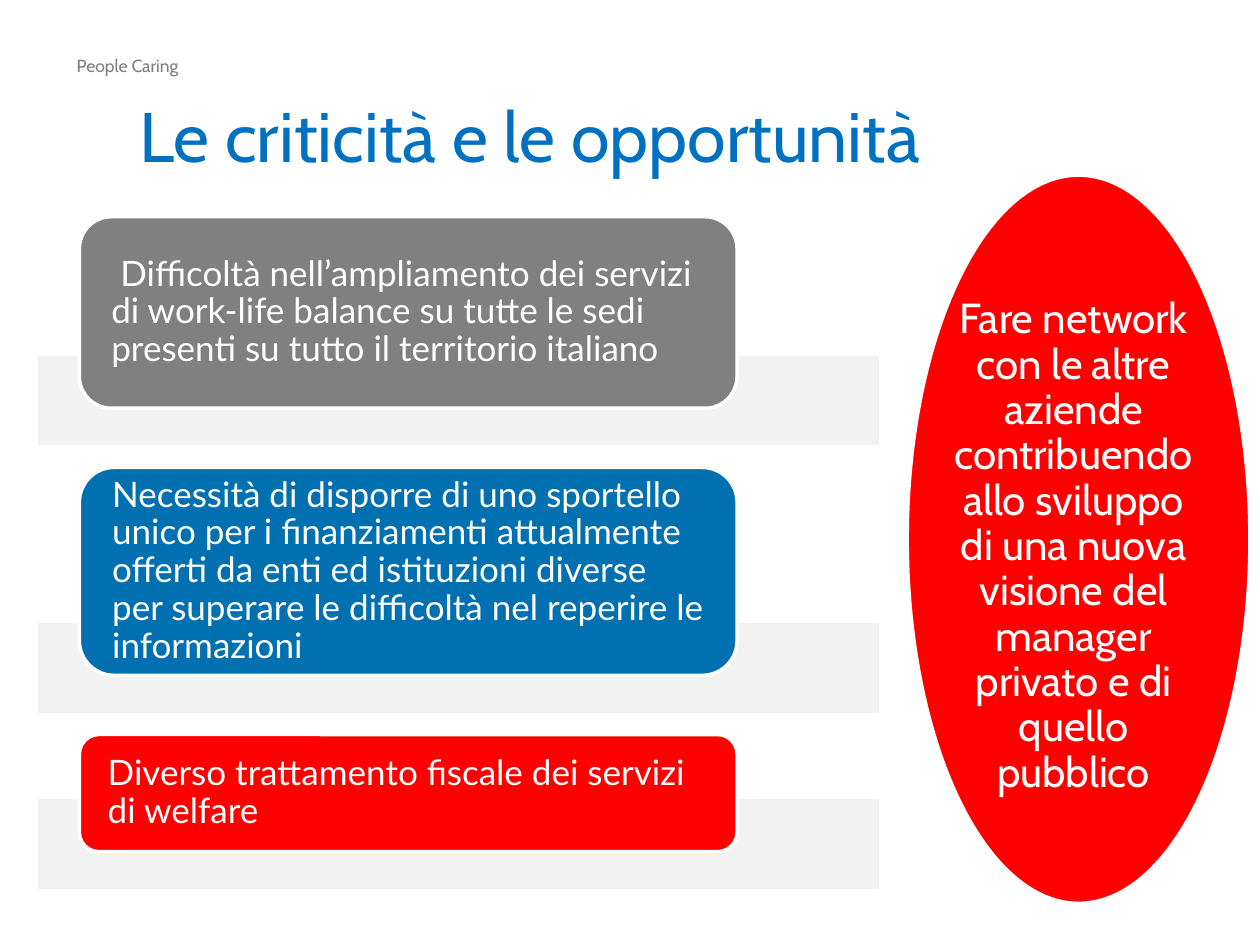
from pptx import Presentation
from pptx import util as u
from pptx.dml import color
from pptx.enum import shapes, text

PX = 9144  # EMU in one px, 100 px to the inch
WHITE, GREY, BLUE, RED = "FFFFFF", "808080", "0070B0", "FF0000"
BAND_OVERLAP = 43

CARDS = [  # top, height, colour, wording
    (172, 152, GREY, " Difficoltà nell’ampliamento dei servizi di work-life balance "
                     "su tutte le sedi presenti su tutto il territorio italiano"),
    (371, 165, BLUE, "Necessità di disporre di uno sportello unico per i finanziamenti "
                     "attualmente offerti da enti ed istituzioni diverse per superare "
                     "le difficoltà nel reperire le informazioni"),
    (583, 93, RED, "Diverso trattamento fiscale dei servizi di welfare"),
]
OPPORTUNITY = ("Fare network con le altre aziende contribuendo allo sviluppo di una "
               "nuova visione del manager privato e di quello pubblico")


def rgb(value):
    return color.RGBColor.from_string(value)


def px(*lengths):
    return [u.Emu(length * PX) for length in lengths]


def write(holder, wording, size, font, colour, inset=(0, 0), spacing=1.0,
          align=text.PP_ALIGN.LEFT, anchor=text.MSO_ANCHOR.MIDDLE):
    frame = holder.text_frame
    frame.auto_size = text.MSO_AUTO_SIZE.NONE
    frame.word_wrap = True
    frame.vertical_anchor = anchor
    frame.margin_left, frame.margin_top = px(*inset)
    frame.margin_right, frame.margin_bottom = px(*inset)
    para = frame.paragraphs[0]
    para.alignment = align
    para.line_spacing = spacing
    span = para.add_run()
    span.text = wording
    span.font.size = u.Pt(size)
    span.font.name = font
    span.font.color.rgb = rgb(colour)


def add_block(page, kind, box, fill):
    block = page.shapes.add_shape(kind, *px(*box))
    block.shadow.inherit = False
    block.fill.solid()
    block.fill.fore_color.rgb = rgb(fill)
    block.line.color.rgb = rgb(WHITE)
    block.line.width = u.Pt(2)
    return block


def add_header(page, left, top):
    label = page.shapes.add_textbox(*px(left, top, 898, 37))
    write(label, "People Caring", 10, "Cabin", "7E7E7E", inset=(10, 5),
          anchor=text.MSO_ANCHOR.BOTTOM)
    # Title, wide enough for one line
    title = page.shapes.title
    title.left, title.top, title.width, title.height = px(left + 47, top + 64, 700, 48)
    write(title, " Le criticità e le opportunità", 40, "Cabin", "0070C0",
          spacing=0.85, anchor=text.MSO_ANCHOR.BOTTOM)


def add_issues(page, left, width):
    for top, height, fill, wording in CARDS:
        # Pale band behind the lower edge of the card
        band_top = top + height - BAND_OVERLAP
        add_block(page, shapes.MSO_SHAPE.RECTANGLE, (left, band_top, width, 74), "F2F2F2")
        card = add_block(page, shapes.MSO_SHAPE.ROUNDED_RECTANGLE,
                         (left + 34, top, 522, height), fill)
        write(card, wording, 20, "Lato", WHITE, inset=(18, 0), spacing=0.9)


def add_opportunity(page, left, top, width, height):
    add_block(page, shapes.MSO_SHAPE.OVAL, (left, top, width, height), RED)
    label = page.shapes.add_textbox(*px(left + 28, top + 91, 208, 408))
    write(label, OPPORTUNITY, 24, "Cabin", WHITE, inset=(3, 3), spacing=0.9,
          align=text.PP_ALIGN.CENTER)


def main():
    deck = Presentation()
    deck.slide_width, deck.slide_height = px(1000, 750)
    page = deck.slides.add_slide(deck.slide_layouts[5])
    add_header(page, 51, 28)
    add_issues(page, 29, 670)
    add_opportunity(page, 720, 139, 272, 578)
    deck.save("out.pptx")


if __name__ == "__main__":
    main()
